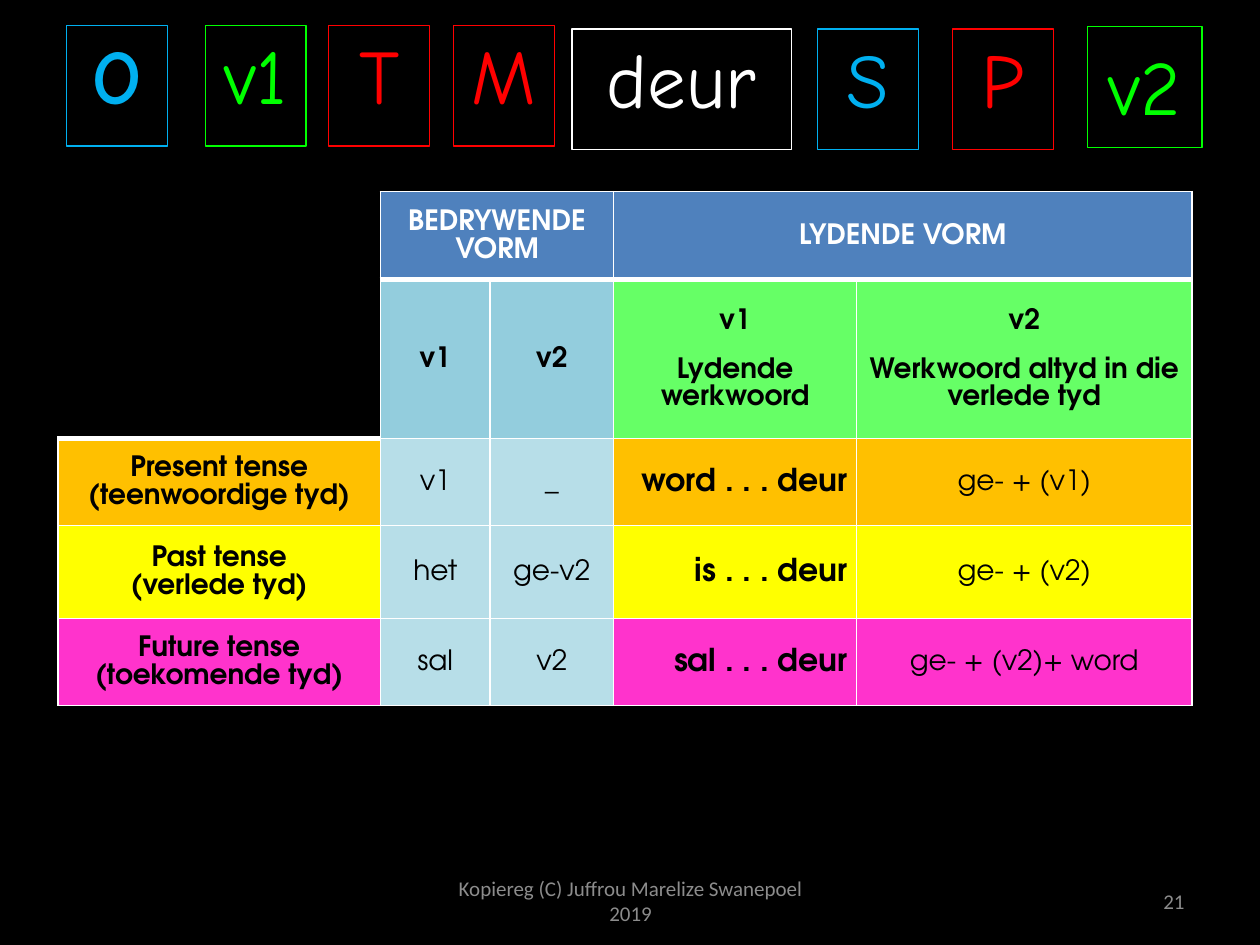
from lxml.etree import SubElement
from pptx import Presentation
from pptx.dml.color import RGBColor
from pptx.enum.shapes import MSO_SHAPE as Shape
from pptx.enum.text import MSO_ANCHOR as Anchor, PP_ALIGN as Align
from pptx.oxml.ns import qn
from pptx.util import Inches, Pt

COLORS = {
    "black": "000000", "white": "FFFFFF", "grey": "8C8C8C",
    "blue": "00B0F0", "green": "00FF00", "red": "FF0000",
    "header": "4F81BD", "active": "93CDDD", "active_light": "B7DEE8",
    "passive": "66FF66", "present": "FFC000", "past": "FFFF00", "future": "FF33CC",
}
WIDTH, HEIGHT = 10, 7.5
TABLE_FONT, CARD_FONT, FOOTER_FONT = "TeX Gyre Adventor", "Comic Neue", "Calibri"
COLUMNS = (2.56, 0.87, 0.98, 1.93, 2.66)
ROWS = (0.7, 1.26, 0.69, 0.74, 0.69)

# Word order of the passive sentence: text, left, top, width, colour
CARDS = (
    ("O", 0.53, 0.2, 0.8, "blue"),
    ("v1", 1.63, 0.2, 0.8, "green"),
    ("T", 2.61, 0.2, 0.8, "red"),
    ("M", 3.6, 0.2, 0.8, "red"),
    ("deur", 4.54, 0.23, 1.74, "white"),
    ("S", 6.49, 0.23, 0.8, "blue"),
    ("P", 7.56, 0.23, 0.8, "red"),
    ("v2", 8.63, 0.21, 0.91, "green"),
)
SUBHEADS = (
    ("v1", "active"),
    ("v2", "active"),
    ("v1\nLydende werkwoord", "passive"),
    ("v2\nWerkwoord altyd in die verlede tyd", "passive"),
)
# Fill, tense, active v1, active v2, passive v1, passive v2
TENSES = (
    ("present", "Present tense\n(teenwoordige tyd)", "v1", "_",
     "word . . . deur", "ge- + (v1)"),
    ("past", "Past tense\n(verlede tyd)", "het", "ge-v2",
     "is . . . deur", "ge- + (v2)"),
    ("future", "Future tense\n(toekomende tyd)", "sal", "v2",
     "sal . . . deur", "ge- + (v2)+ word"),
)


def rgb(name):
    return RGBColor.from_string(COLORS[name])


def write_text(frame, text, font=TABLE_FONT, size=16, color="black", bold=False,
               align=Align.CENTER, spacing=None, gap=0):
    """Write one paragraph per line of text."""
    frame.word_wrap = True
    for index, line in enumerate(text.split("\n")):
        paragraph = frame.add_paragraph() if index else frame.paragraphs[0]
        paragraph.alignment = align
        paragraph.line_spacing = spacing
        paragraph.space_before = paragraph.space_after = Pt(gap)
        run = paragraph.add_run()
        run.text = line
        run.font.name, run.font.size, run.font.bold = font, Pt(size), bold
        run.font.color.rgb = rgb(color)


def add_card(slide, text, left, top, width, color):
    card = slide.shapes.add_shape(
        Shape.RECTANGLE, Inches(left), Inches(top), Inches(width), Inches(0.96))
    card.shadow.inherit = False
    card.fill.solid()
    card.fill.fore_color.rgb = rgb("black")
    card.line.color.rgb = rgb(color)
    card.line.width = Pt(0.75)
    frame = card.text_frame
    frame.vertical_anchor = Anchor.TOP
    frame.margin_left = frame.margin_right = Inches(0.1)
    frame.margin_top = frame.margin_bottom = Inches(0.1)
    write_text(frame, text, font=CARD_FONT, size=44, color=color,
               bold=text == "O", spacing=1.0 if text == "v2" else 0.9)


def set_borders(cell, **sides):
    """Draw each side (L, R, T, B) given as (colour, width in points)."""
    properties = cell._tc.get_or_add_tcPr()
    for position, side in enumerate("LRTB"):
        color, width = sides.get(side, ("white", 1))
        line = properties.makeelement(qn(f"a:ln{side}"), {"w": str(Pt(width))})
        fill = SubElement(line, qn("a:solidFill"))
        SubElement(fill, qn("a:srgbClr"), val=COLORS[color])
        properties.insert(position, line)


def fill_cell(cell, text, fill, **text_format):
    cell.fill.solid()
    cell.fill.fore_color.rgb = rgb(fill)
    cell.vertical_anchor = Anchor.MIDDLE
    cell.margin_left = cell.margin_right = Inches(0.07)
    cell.margin_top = cell.margin_bottom = 0
    if text:
        write_text(cell.text_frame, text,
                   **{"spacing": 1.07, "gap": 6, **text_format})


def add_tense_table(slide):
    table = slide.shapes.add_table(
        len(ROWS), len(COLUMNS), Inches(0.46), Inches(1.52),
        Inches(sum(COLUMNS)), Inches(sum(ROWS))).table
    for column, width in zip(table.columns, COLUMNS):
        column.width = Inches(width)
    for row, height in zip(table.rows, ROWS):
        row.height = Inches(height)

    for first, last in (((0, 0), (1, 0)), ((0, 1), (0, 2)), ((0, 3), (0, 4))):
        table.cell(*first).merge(table.cell(*last))
    for row in (0, 1):
        fill_cell(table.cell(row, 0), "", "black")
    for column, heading in ((1, "BEDRYWENDE VORM"), (3, "LYDENDE VORM")):
        fill_cell(table.cell(0, column), heading, "header", color="white", bold=True)
    for column, (text, fill) in enumerate(SUBHEADS, 1):
        fill_cell(table.cell(1, column), text, fill, bold=True)
    for row, (fill, tense, *active, auxiliary, participle) in enumerate(TENSES, 2):
        fill_cell(table.cell(row, 0), tense, fill, bold=True, gap=0)
        for column, verb in enumerate(active, 1):
            fill_cell(table.cell(row, column), verb, "active_light")
        fill_cell(table.cell(row, 3), auxiliary, fill, size=18, bold=True,
                  align=Align.RIGHT)
        fill_cell(table.cell(row, 4), participle, fill)

    thick, hidden = ("white", 3), ("black", 1)
    for row in range(len(ROWS)):
        for column in range(len(COLUMNS)):
            sides = {}
            if column == 0 and row < 2:
                sides = {"L": hidden, "T": hidden, "B": thick}
            elif row == 0:
                sides = {"B": thick}
            elif row == (2 if column == 0 else 1):
                sides = {"T": thick}
            set_borders(table.cell(row, column), **sides)


def add_footer(slide, text, left, width, align):
    box = slide.shapes.add_textbox(
        Inches(left), Inches(6.95), Inches(width), Inches(0.4))
    box.text_frame.vertical_anchor = Anchor.MIDDLE
    write_text(box.text_frame, text, font=FOOTER_FONT, size=12, color="grey",
               align=align)


def main():
    deck = Presentation()
    deck.slide_width, deck.slide_height = Inches(WIDTH), Inches(HEIGHT)
    slide = deck.slides.add_slide(deck.slide_layouts[6])
    slide.background.fill.solid()
    slide.background.fill.fore_color.rgb = rgb("black")

    add_tense_table(slide)
    for card in CARDS:
        add_card(slide, *card)
    add_footer(slide, "Kopiereg (C) Juffrou Marelize Swanepoel 2019",
               3.42, 3.17, Align.CENTER)
    add_footer(slide, "21", 7.17, 2.33, Align.RIGHT)
    deck.save("out.pptx")


if __name__ == "__main__":
    main()
